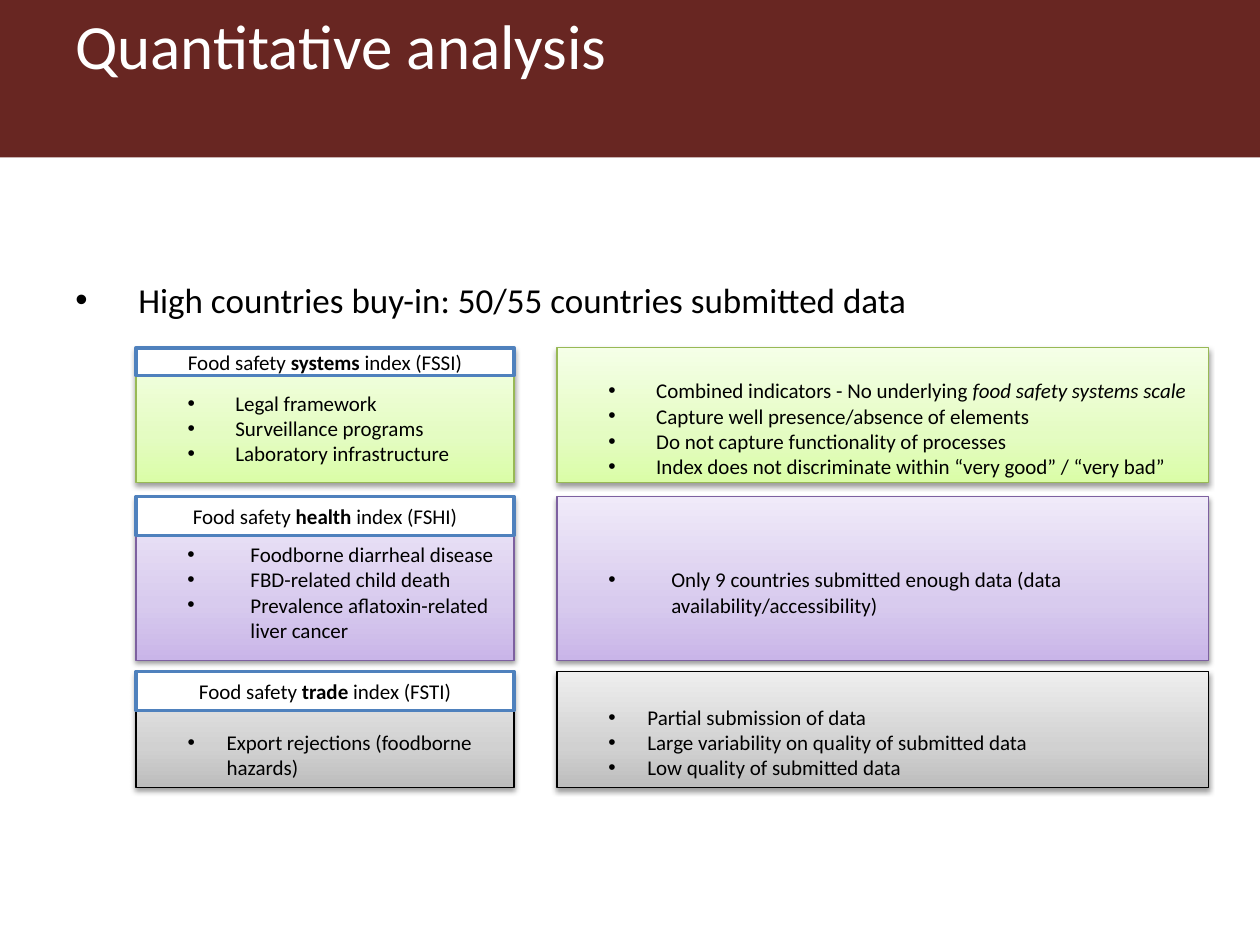
from dataclasses import dataclass

from lxml import etree
from pptx import Presentation
from pptx.dml.color import RGBColor
from pptx.enum.shapes import MSO_SHAPE
from pptx.enum.text import MSO_ANCHOR, PP_ALIGN
from pptx.oxml.ns import qn
from pptx.util import Inches, Pt

RECTANGLE = MSO_SHAPE.RECTANGLE
TOP = MSO_ANCHOR.TOP
MIDDLE = MSO_ANCHOR.MIDDLE
LEFT = PP_ALIGN.LEFT
CENTER = PP_ALIGN.CENTER

FONT = "Calibri"
BLACK = RGBColor(0, 0, 0)
WHITE = RGBColor(0xFF, 0xFF, 0xFF)
MAROON = RGBColor(0x68, 0x26, 0x22)
BLUE = RGBColor(0x4F, 0x81, 0xBD)
GREEN_LINE = RGBColor(0x98, 0xB9, 0x55)
GREENS = (RGBColor(0xDA, 0xFD, 0xA7), RGBColor(0xE4, 0xFC, 0xC2), RGBColor(0xF5, 0xFF, 0xE7))
PURPLE_LINE = RGBColor(0x7D, 0x60, 0xA0)
PURPLES = (RGBColor(0xC9, 0xB5, 0xE8), RGBColor(0xD8, 0xCB, 0xEE), RGBColor(0xF0, 0xEA, 0xF9))
GRAYS = (RGBColor(0xBD, 0xBD, 0xBD), RGBColor(0xD1, 0xD1, 0xD1), RGBColor(0xEE, 0xEE, 0xEE))
GRADIENT_STOPS = (0, 35, 100)

INDEX_LEFT, INDEX_WIDTH = 1.08, 3
FINDING_LEFT, FINDING_WIDTH = 4.42, 5.17


@dataclass
class IndexRow:
    top: float
    height: float
    label_height: float
    label: tuple
    shades: tuple
    outline: RGBColor
    indent: float
    hanging: float
    components: list
    component_inset: float
    findings: list
    finding_inset: float


ROWS = [
    IndexRow(
        2.76, 1.07, 0.22, ("systems", "FSSI"), GREENS, GREEN_LINE, 0.69, 0.38,
        ["Legal framework", "Surveillance programs", "Laboratory infrastructure"], 0.34,
        [[("Combined indicators - No underlying ", ""), ("food safety systems scale", "italic")],
         "Capture well presence/absence of elements",
         "Do not capture functionality of processes",
         "Index does not discriminate within “very good” / “very bad”"], 0.24,
    ),
    IndexRow(
        3.94, 1.3, 0.31, ("health", "FSHI"), PURPLES, PURPLE_LINE, 0.81, 0.5,
        ["Foodborne diarrheal disease", "FBD-related child death",
         "Prevalence aflatoxin-related liver cancer"], 0.36,
        ["Only 9 countries submitted enough data (data availability/accessibility)"], 0.56,
    ),
    IndexRow(
        5.33, 0.92, 0.31, ("trade", "FSTI"), GRAYS, BLACK, 0.62, 0.31,
        ["Export rejections (foodborne hazards)"], 0.46,
        ["Partial submission of data",
         "Large variability on quality of submitted data",
         "Low quality of submitted data"], 0.26,
    ),
]


def write_text(frame, paragraphs, size=12, color=BLACK, align=LEFT, anchor=TOP,
               top_inset=0.05, bullet=None, indent=0, hanging=0, line_spacing=None, space_after=None):
    frame.word_wrap = True
    frame.vertical_anchor = anchor
    frame.margin_top = Inches(top_inset)
    for number, content in enumerate(paragraphs):
        paragraph = frame.add_paragraph() if number else frame.paragraphs[0]
        if bullet:
            properties = paragraph._p.get_or_add_pPr()
            properties.set("marL", str(Inches(indent)))
            properties.set("indent", str(-Inches(hanging)))
            etree.SubElement(properties, qn("a:buFont"), typeface="Arial")
            etree.SubElement(properties, qn("a:buChar"), char=bullet)
        paragraph.alignment = align
        paragraph.line_spacing = line_spacing
        paragraph.space_after = space_after
        for words, style in [(content, "")] if isinstance(content, str) else content:
            run = paragraph.add_run()
            run.text = words
            run.font.name = FONT
            run.font.size = Pt(size)
            run.font.color.rgb = color
            run.font.bold = style == "bold"
            run.font.italic = style == "italic"


def add_text(slide, left, top, width, height, paragraphs, **text_format):
    box = slide.shapes.add_textbox(Inches(left), Inches(top), Inches(width), Inches(height))
    write_text(box.text_frame, paragraphs, **text_format)


def add_rectangle(slide, left, top, width, height, fill=None, line=None, line_width=0.75):
    rectangle = slide.shapes.add_shape(
        RECTANGLE, Inches(left), Inches(top), Inches(width), Inches(height))
    rectangle.shadow.inherit = False
    if fill is not None:
        rectangle.fill.solid()
        rectangle.fill.fore_color.rgb = fill
    if line is None:
        rectangle.line.fill.background()
    else:
        rectangle.line.color.rgb = line
        rectangle.line.width = Pt(line_width)
    return rectangle


def apply_gradient(rectangle, shades):
    rectangle.fill.gradient()
    rectangle.fill.gradient_angle = 90
    stops = rectangle._element.spPr.find(qn("a:gradFill")).find(qn("a:gsLst"))
    for stop in list(stops):
        stops.remove(stop)
    for position, shade in zip(GRADIENT_STOPS, shades):
        stop = etree.SubElement(stops, qn("a:gs"), pos=str(position * 1000))
        etree.SubElement(stop, qn("a:srgbClr"), val=str(shade))


def apply_shadow(rectangle):
    effects = rectangle._element.spPr.find(qn("a:effectLst"))
    shadow = etree.SubElement(
        effects, qn("a:outerShdw"), blurRad=str(Pt(3.1)), dist=str(Pt(1.6)),
        dir="5400000", rotWithShape="0")
    tint = etree.SubElement(shadow, qn("a:srgbClr"), val=str(BLACK))
    etree.SubElement(tint, qn("a:alpha"), val="38000")


def add_panel(slide, row, left, width, points, inset):
    panel = add_rectangle(slide, left, row.top, width, row.height, line=row.outline)
    apply_gradient(panel, row.shades)
    apply_shadow(panel)
    write_text(panel.text_frame, points, top_inset=inset, bullet="•",
               indent=row.indent, hanging=row.hanging)


def add_index_label(slide, row):
    label = add_rectangle(slide, INDEX_LEFT, row.top, INDEX_WIDTH, row.label_height,
                          fill=WHITE, line=BLUE, line_width=2)
    topic, code = row.label
    write_text(label.text_frame,
               [[("Food safety ", ""), (topic, "bold"), (f" index ({code})", "")]],
               align=CENTER, anchor=MIDDLE)


def main():
    deck = Presentation()
    deck.slide_width = Inches(10)
    deck.slide_height = Inches(7.5)
    slide = deck.slides.add_slide(deck.slide_layouts[6])

    add_rectangle(slide, 0, 0, 10, 1.25, fill=MAROON)
    add_text(slide, 0.5, 0, 9, 1.25, ["Quantitative analysis"], size=36, color=WHITE)
    add_text(slide, 0.5, 1.83, 9, 5, ["High countries buy-in: 50/55 countries submitted data"],
             size=20, bullet="•", indent=0.5, hanging=0.5, line_spacing=2, space_after=Pt(12))
    for row in ROWS:
        add_panel(slide, row, INDEX_LEFT, INDEX_WIDTH, row.components, row.component_inset)
        add_index_label(slide, row)
        add_panel(slide, row, FINDING_LEFT, FINDING_WIDTH, row.findings, row.finding_inset)

    deck.save("out.pptx")


if __name__ == "__main__":
    main()
